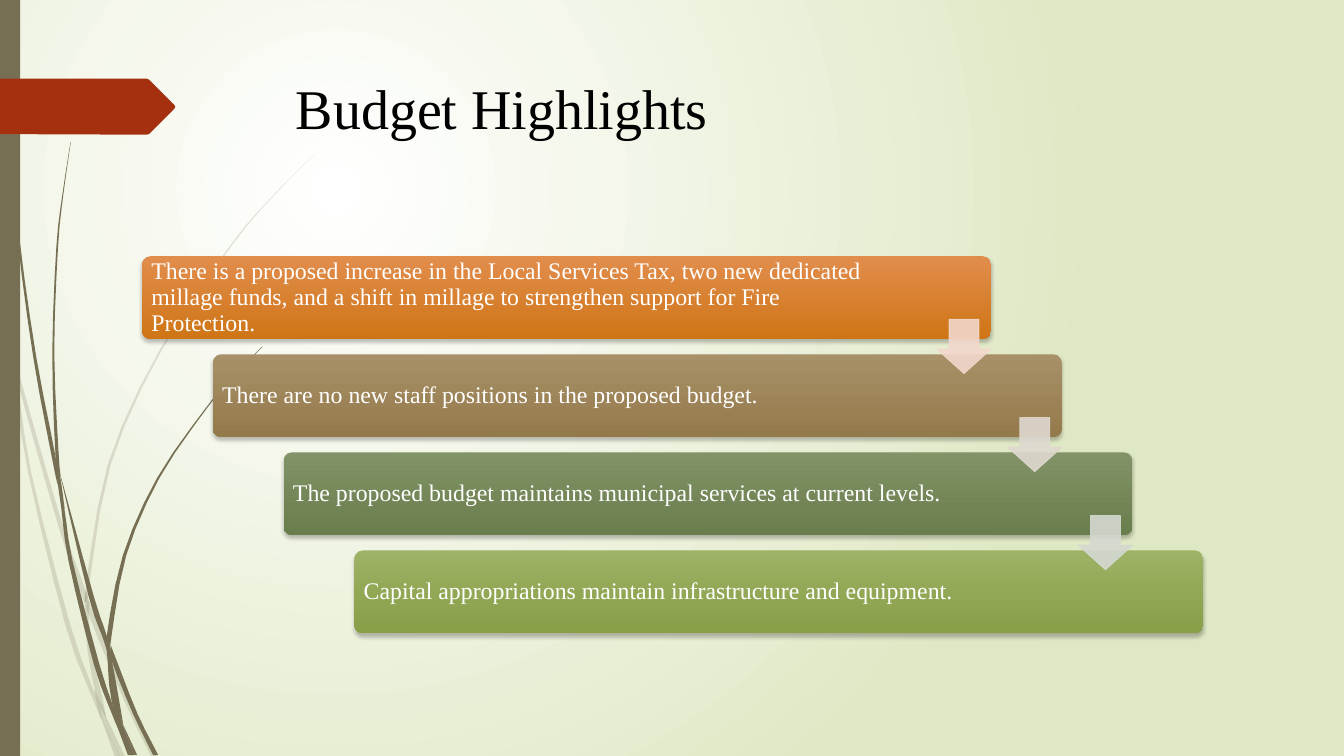
from lxml import etree
from pptx import Presentation
from pptx.dml.color import RGBColor
from pptx.enum.shapes import MSO_SHAPE
from pptx.enum.text import MSO_ANCHOR
from pptx.oxml.ns import qn
from pptx.util import Pt

RECTANGLE = MSO_SHAPE.RECTANGLE
ROUNDED = MSO_SHAPE.ROUNDED_RECTANGLE
DOWN_ARROW = MSO_SHAPE.DOWN_ARROW
MIDDLE = MSO_ANCHOR.MIDDLE

FONT = "Times New Roman"
BROWN = "766F54"
PAGE_WIDTH, PAGE_HEIGHT = 960, 540
UNITS_PER_POINT = 100
CURVE_STEPS = 3

# Each blade runs from tip to foot: left edge, height on page, thickness.
PALE_BLADES = [
    [(0, 203, 0.2), (0, 215, 3), (3.6, 232, 2.9), (7.9, 252, 0.3)],
    [(10, 248, 0.2), (12.2, 271, 2.6), (41.8, 376, 3.2), (57.2, 422, 4), (60.5, 431, 0.4)],
    [(63.4, 429, 0.2), (63.4, 439, 3.9), (88.6, 500, 3.4), (108, 540.5, 3.6)],
    [(75.6, 512, 0.2), (85.7, 540.5, 3.6)],
    [(7.9, 252, 0.2), (9.8, 271, 2.4), (20.2, 338, 2.2), (46.8, 447, 3.6),
     (66.2, 499, 2.9), (72.7, 514, 0.2)],
    [(60.5, 431, 0.2), (61, 439, 2.4), (62.6, 465, 2.9), (69, 498, 4), (75.4, 512, 0.2)],
    [(224.6, 110, 0.2), (192.8, 142, 0.7), (164, 176, 1.2), (113.8, 250.5, 1.5),
     (77, 332, 2), (61.2, 420.5, 2.2), (63.2, 429, 0.2)],
    [(72.7, 514, 0.2), (82, 540.5, 3.6)],
    [(61.2, 422, 0.2), (60.6, 429, 2.8), (63.2, 439, 0.2)],
    [(67, 492, 0.2), (71, 509, 4), (72.7, 514, 3.6), (85.5, 540.5, 0.2)],
]
DARK_BLADES = [
    [(2.2, 0, 0.7), (5, 79, 0.7), (12.2, 168, 1.4), (23.8, 255.6, 2.2),
     (36.9, 326, 2.7), (41, 346, 0.2)],
    [(43.2, 340, 0.2), (63.4, 426.2, 3.7), (73, 454.3, 3.3), (76.3, 464.4, 0.2)],
    [(79.2, 461.5, 0.2), (79.9, 472.3, 3.6), (95, 509.8, 3.2), (109.4, 539.3, 3.6)],
    [(41, 343.4, 0.2), (43.9, 364, 2.2), (49, 401, 2.9), (67, 474.5, 4),
     (80, 510, 2.6), (84.2, 520, 0.2)],
    [(50.4, 101.5, 0.2), (44.6, 139, 0.7), (40.3, 176.4, 1.2), (37.4, 251.3, 1.4),
     (39.6, 323.3, 2.3), (43.2, 340, 0.2)],
    [(87.8, 517.7, 0.2), (95.8, 539.3, 2.2)],
    [(39.6, 323.3, 0.2), (41, 343.4, 2.5), (46, 363.6, 0.2)],
    [(187.2, 247.7, 0.5), (166.3, 268.6, 0.7), (146.9, 291.6, 1), (112.3, 341.3, 1.7),
     (87.8, 396.7, 2.4), (76.3, 454.3, 3.4), (79.2, 461.5, 0.2)],
    [(84.2, 520, 0.2), (91.4, 539.3, 2.9)],
    [(76.3, 464.4, 0.2), (76.9, 472.3, 3), (79.2, 497.5, 5.4), (87.8, 517.7, 0.2)],
    [(76.3, 454.3, 0.2), (76.3, 464.4, 2.9), (79.9, 472.3, 0.2)],
    [(79.2, 497.5, 0.2), (84.2, 520, 4.4), (93.6, 539.3, 2.2)],
]

# Text, its box width, gradient colours, colour of the arrow to the next bar.
HIGHLIGHTS = [
    ("There is a proposed increase in the Local Services Tax, two new dedicated "
     "millage funds, and a shift in millage to strengthen support for Fire Protection.",
     535, ("E18D4C", "CF7516"), "F2D8CC"),
    ("There are no new staff positions in the proposed budget.",
     514, ("A89068", "947A4B"), "DFD9D0"),
    ("The proposed budget maintains municipal services at current levels.",
     514, ("819367", "6A7D4D"), "D5D9D1"),
    ("Capital appropriations maintain infrastructure and equipment.",
     514, ("9DB265", "889E47"), None),
]


def color(value):
    return RGBColor.from_string(value)


def set_opacity(shape, percent):
    """Set the opacity of every solid colour in a shape's fill and line."""
    for tone in shape.element.spPr.iter(qn("a:srgbClr")):
        etree.SubElement(tone, qn("a:alpha")).set("val", str(percent * 1000))


def paint(shape, fill):
    shape.shadow.inherit = False
    shape.fill.solid()
    shape.fill.fore_color.rgb = color(fill)
    shape.line.fill.background()


def paint_gradient(fill, tones):
    fill.gradient()
    for stop, position, tone in zip(fill.gradient_stops, (0, 1), tones):
        stop.position = position
        stop.color.rgb = color(tone)


def add_shape(page, kind, left, top, width, height):
    return page.shapes.add_shape(kind, Pt(left), Pt(top), Pt(width), Pt(height))


def add_outline(page, points, fill):
    scaled = [(x * UNITS_PER_POINT, y * UNITS_PER_POINT) for x, y in points]
    builder = page.shapes.build_freeform(*scaled[0], scale=Pt(1) / UNITS_PER_POINT)
    builder.add_line_segments(scaled[1:], close=True)
    shape = builder.convert_to_shape()
    paint(shape, fill)
    return shape


def smooth(knots):
    """Interpolate the knots with a Catmull-Rom curve."""
    if len(knots) == 2:
        return knots
    padded = [knots[0], *knots, knots[-1]]
    curve = []
    for index in range(len(knots) - 1):
        for step in range(CURVE_STEPS):
            t = step / CURVE_STEPS
            curve.append(tuple(
                b + t / 2 * (c - a + t * (2 * a - 5 * b + 4 * c - d
                                          + t * (3 * b - a - 3 * c + d)))
                for a, b, c, d in zip(*padded[index:index + 4])))
    return curve + [knots[-1]]


def add_blade(page, knots):
    curve = smooth(knots)
    near_edge = [(x, y) for x, y, _ in curve]
    far_edge = [(x + thickness, y) for x, y, thickness in reversed(curve)]
    return add_outline(page, near_edge + far_edge, BROWN)


def add_text(page, text, left, top, width, height, size, tone, inset):
    box = page.shapes.add_textbox(Pt(left), Pt(top), Pt(width), Pt(height))
    frame = box.text_frame
    frame.word_wrap = True
    frame.margin_left = frame.margin_right = Pt(inset)
    para = frame.paragraphs[0]
    para.text = text
    para.font.name, para.font.size = FONT, Pt(size)
    para.font.color.rgb = color(tone)
    return frame


def draw_background(page):
    paint_gradient(page.background.fill, ("FFFFFF", "DFE8C4"))
    gradient = page.element.xpath("./p:cSld/p:bg//a:gradFill")[0]
    gradient.remove(gradient.find(qn("a:lin")))
    radial = etree.SubElement(gradient, qn("a:path"), path="circle")
    etree.SubElement(radial, qn("a:fillToRect"),
                     l="50000", t="50000", r="100000", b="100000")


def draw_margin(page):
    """Draw the grass blades, the side band and the red ribbon."""
    for knots in PALE_BLADES:
        set_opacity(add_blade(page, knots), 20)
    for knots in DARK_BLADES:
        add_blade(page, knots)
    paint(add_shape(page, RECTANGLE, 0, 0, 14.4, PAGE_HEIGHT), BROWN)
    add_outline(page, [(0, 56.2), (105, 56.2), (106.6, 57), (124.6, 75), (125.2, 76.3),
                       (124.6, 77.6), (106.6, 95.6), (105, 96.2), (0, 95.8)], "A53010")


def draw_bar(page, left, top, width, height, text, text_width, tones):
    bar = add_shape(page, ROUNDED, left, top, width, height)
    bar.adjustments[0] = 0.1
    paint_gradient(bar.fill, tones)
    bar.fill.gradient_angle = 270
    bar.line.fill.background()
    bar.shadow.inherit = False
    effects = bar.element.spPr.find(qn("a:effectLst"))
    shadow = etree.SubElement(effects, qn("a:outerShdw"), blurRad=str(Pt(3)),
                              dist=str(Pt(2)), dir="5400000", rotWithShape="0")
    shade = etree.SubElement(shadow, qn("a:srgbClr"), val="000000")
    etree.SubElement(shade, qn("a:alpha"), val="25000")

    frame = add_text(page, text, left + 1.7, top + 1.7, text_width, height - 3.1,
                     17, "FFFFFF", 5)
    frame.margin_top = frame.margin_bottom = Pt(5)
    frame.vertical_anchor = MIDDLE
    frame.paragraphs[0].line_spacing = 0.9


def draw_arrow(page, left, top, size, tone):
    arrow = add_shape(page, DOWN_ARROW, left, top, size, size)
    arrow.adjustments[0], arrow.adjustments[1] = 0.55, 0.45
    paint(arrow, tone)
    arrow.line.color.rgb = color(tone)
    arrow.line.width = Pt(0.75)
    set_opacity(arrow, 90)


def draw_staircase(page, left, top, width, height):
    """Draw the highlights as descending bars linked by arrows."""
    bar_width, bar_height, arrow_size = 0.8 * width, 59, 38.6
    last = len(HIGHLIGHTS) - 1
    step_x, step_y = (width - bar_width) / last, (height - bar_height) / last
    corners = [(left + i * step_x, top + i * step_y) for i in range(last + 1)]
    for (x, y), (text, text_width, tones, _) in zip(corners, HIGHLIGHTS):
        draw_bar(page, x, y, bar_width, bar_height, text, text_width, tones)
    for (x, y), (*_, arrow_tone) in zip(corners[:-1], HIGHLIGHTS):
        draw_arrow(page, x + bar_width - arrow_size, y + 45.2, arrow_size, arrow_tone)


def main():
    deck = Presentation()
    deck.slide_width, deck.slide_height = Pt(PAGE_WIDTH), Pt(PAGE_HEIGHT)
    page = deck.slides.add_slide(deck.slide_layouts[6])
    draw_background(page)
    draw_margin(page)
    add_text(page, "Budget Highlights", 204.2, 48.9, 702, 100.8, 40, "000000", 7.2)
    draw_staircase(page, 101.5, 183, 758, 269.2)
    deck.save("out.pptx")


if __name__ == "__main__":
    main()
